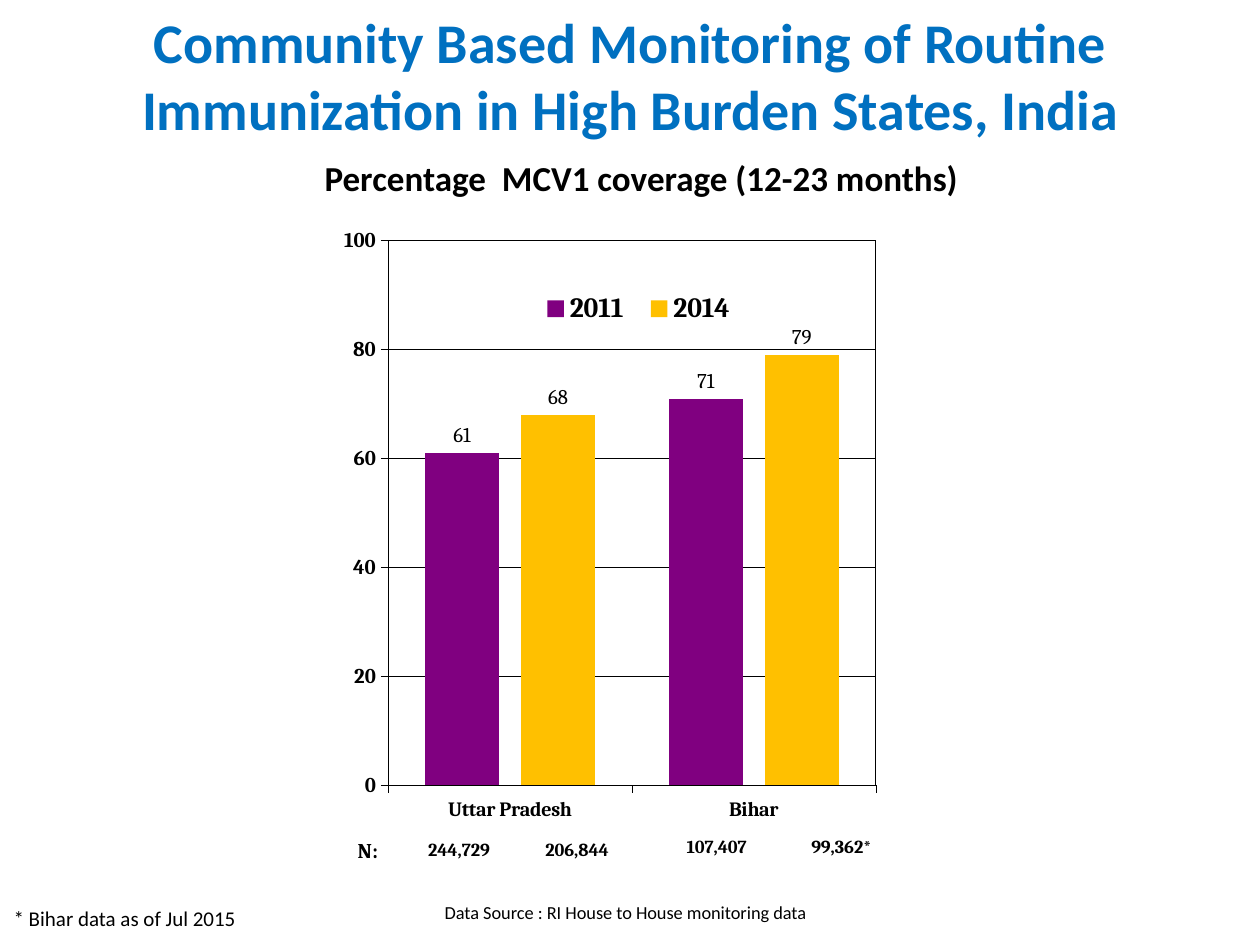
import pptx
import pptx.chart.data
import pptx.dml.color
import pptx.enum.chart
import pptx.enum.dml
import pptx.enum.text
import pptx.oxml
import pptx.util
from pptx.util import Pt

C_NS = 'xmlns:c="http://schemas.openxmlformats.org/drawingml/2006/chart"'
A_NS = 'xmlns:a="http://schemas.openxmlformats.org/drawingml/2006/main"'


def rgb(value):
    return pptx.dml.color.RGBColor.from_string(value)


def place(parent, index, target, x, y, w, h):
    """Give a chart part a manual layout, as fractions of the chart."""
    for old in parent.xpath("c:layout"):
        parent.remove(old)
    modes = target + '<c:xMode val="edge"/><c:yMode val="edge"/>'
    sizes = "".join(f'<c:{k} val="{v}"/>' for k, v in zip("xywh", (x, y, w, h)))
    parent.insert(index, pptx.oxml.parse_xml(
        f"<c:layout {C_NS}><c:manualLayout>{modes}{sizes}</c:manualLayout></c:layout>"))


prs = pptx.Presentation()
prs.slide_width, prs.slide_height = Pt(720), Pt(540)
s = prs.slides.add_slide(prs.slide_layouts[5])

# Coverage chart
data = pptx.chart.data.CategoryChartData(number_format="0")
data.categories = ["Uttar Pradesh", "Bihar"]
data.add_series("2011", (61, 71))
data.add_series("2014", (68, 79))
chart = s.shapes.add_chart(
    pptx.enum.chart.XL_CHART_TYPE.COLUMN_CLUSTERED,
    Pt(196.6), Pt(89.3), Pt(315.4), Pt(405.4), data).chart
chart.has_title = False
chart.has_legend = True
legend = chart.legend
legend.position = pptx.enum.chart.XL_LEGEND_POSITION.TOP
legend.include_in_layout = False

plot = chart.plots[0]
plot.gap_width, plot.overlap, plot.vary_by_categories = 100, -30, False
plot.has_data_labels = True
labels = plot.data_labels
labels.show_value = True
labels.number_format, labels.number_format_is_linked = "0", False
labels.position = pptx.enum.chart.XL_LABEL_POSITION.OUTSIDE_END
for series, color in zip(plot.series, ("800080", "FFC000")):
    series.format.fill.solid()
    series.format.fill.fore_color.rgb = rgb(color)

# Axes and gridlines
cat_axis, val_axis = chart.category_axis, chart.value_axis
val_format = dict(minimum_scale=0, maximum_scale=100, major_unit=20,
                  has_major_gridlines=True)
for name, value in val_format.items():
    setattr(val_axis, name, value)
val_axis.tick_labels.number_format = "#,##0"
val_axis.tick_labels.number_format_is_linked = False
grid = val_axis.major_gridlines.format.line
grid.dash_style = pptx.enum.dml.MSO_LINE.SQUARE_DOT
for line in (grid, cat_axis.format.line, val_axis.format.line):
    line.width = Pt(0.15)
    line.color.rgb = rgb("000000")
for axis in (cat_axis, val_axis):
    axis.major_tick_mark = pptx.enum.chart.XL_TICK_MARK.OUTSIDE

# Chart fonts
for font, face, size, bold in (
        (chart.font, "Times New Roman", 15.9, True),
        (legend.font, "Cambria", 15.9, True),
        (cat_axis.tick_labels.font, "Cambria", 11.6, True),
        (val_axis.tick_labels.font, "Cambria", 12, True),
        (labels.font, "Cambria", 12, False)):
    for name, value in dict(name=face, size=Pt(size), bold=bold).items():
        setattr(font, name, value)
    font.color.rgb = rgb("000000")

# Plot area and legend positions, plot border
plot_area = chart.element.xpath("c:chart/c:plotArea")[0]
place(plot_area, 0, '<c:layoutTarget val="inner"/>', 0.073, 0.119, 0.89, 0.768)
place(chart.element.xpath("c:chart/c:legend")[0], 1, "", 0.33, 0.18, 0.4, 0.07)
plot_area.append(pptx.oxml.parse_xml(
    f'<c:spPr {C_NS} {A_NS}><a:noFill/><a:ln w="9525"><a:solidFill>'
    '<a:srgbClr val="000000"/></a:solidFill></a:ln></c:spPr>'))

# Title, subtitle, sample sizes and notes
CENTER, LEFT = pptx.enum.text.PP_ALIGN.CENTER, pptx.enum.text.PP_ALIGN.LEFT
texts = [
    ("Community Based Monitoring of Routine Immunization in High Burden States, India",
     (0.7, 0.7, 719.3, 85), "Calibri", 32, True, "0070C0", CENTER, True),
    ("Percentage  MCV1 coverage (12-23 months)",
     (78.5, 85.7, 576, 31.7), "Calibri", 20, True, "000000", CENTER, True),
    ("Data Source : RI House to House monitoring data",
     (247, 511.2, 278, 20.2), "Calibri", 10.5, False, "000000", LEFT, True),
    ("* Bihar data as of Jul 2015",
     (0.7, 514.1, 218.2, 21.6), "Calibri", 12, False, "000000", LEFT, True),
    ("N:", (197.3, 475.2, 29.5, 21.6), "Cambria", 12, True, "000000", LEFT, False),
]
for count, x, y, w in (("244,729", 237.6, 475.2, 59.8), ("206,844", 304.6, 475.2, 61.9),
                       ("107,407", 385.2, 473.8, 59), ("99,362*", 456.5, 473.8, 56.9)):
    texts.append((count, (x, y, w, 20.6), "Cambria", 10.5, True, "000000", LEFT, False))

for i, (text, box, face, size, bold, color, align, wrap) in enumerate(texts):
    sp = s.shapes.title if i == 0 else s.shapes.add_textbox(0, 0, 0, 0)
    for name, value in zip(("left", "top", "width", "height"), box):
        setattr(sp, name, Pt(value))
    tf = sp.text_frame
    tf.word_wrap = wrap
    tf.auto_size = pptx.enum.text.MSO_AUTO_SIZE.SHAPE_TO_FIT_TEXT
    tf.vertical_anchor = pptx.enum.text.MSO_ANCHOR.TOP
    p = tf.paragraphs[0]
    p.alignment = align
    r = p.add_run()
    r.text = text
    for name, value in dict(name=face, size=Pt(size), bold=bold).items():
        setattr(r.font, name, value)
    r.font.color.rgb = rgb(color)

prs.save("out.pptx")
